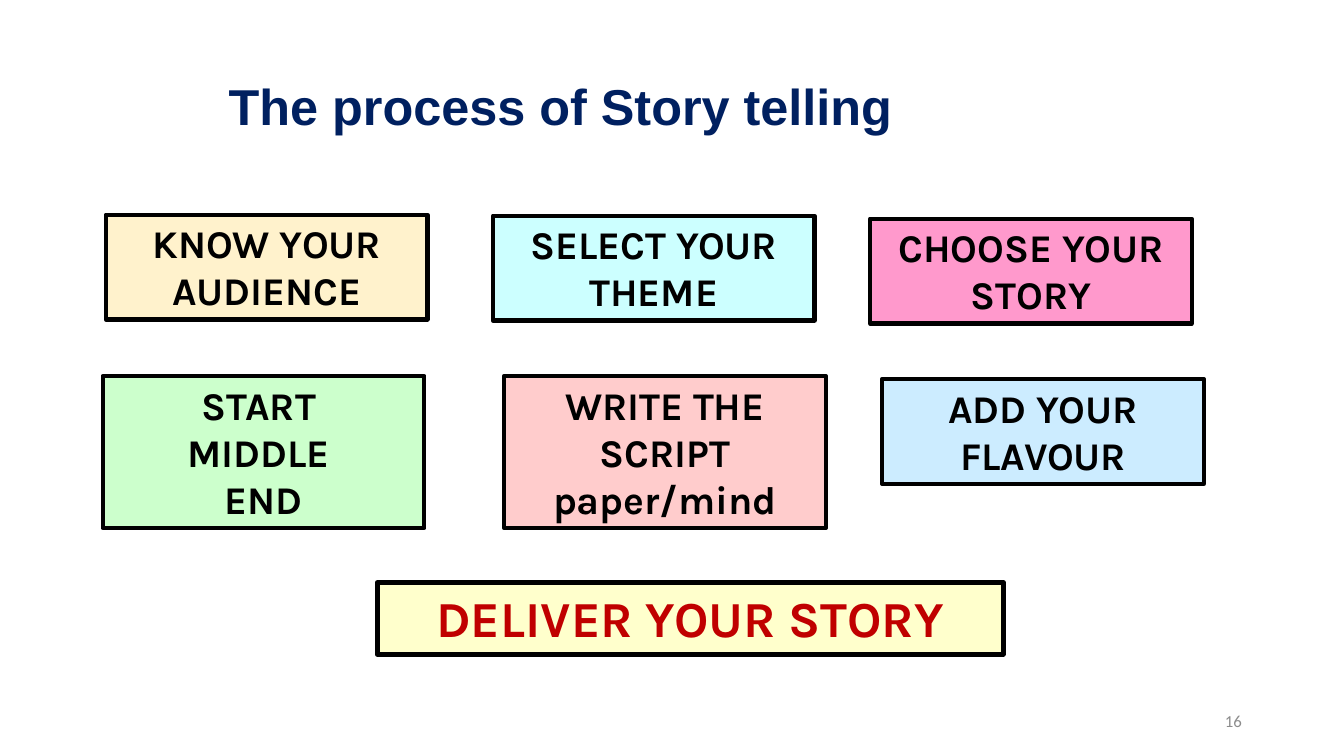
from pptx import Presentation, util as u
from pptx.dml.color import RGBColor
from pptx.enum import shapes, text

HEX = {
    "navy": "002060", "gray": "8C8C8C", "black": "000000", "red": "C00000",
    "cream": "FFF2CC", "aqua": "CCFFFF", "pink": "FF99CC", "green": "CCFFCC",
    "rose": "FFCCCC", "sky": "CCECFF", "yellow": "FFFFCC",
}
LEFT, MID, RIGHT = text.PP_ALIGN.LEFT, text.PP_ALIGN.CENTER, text.PP_ALIGN.RIGHT
TOP, CORE, BASE = text.MSO_ANCHOR.TOP, text.MSO_ANCHOR.MIDDLE, text.MSO_ANCHOR.BOTTOM

deck = Presentation()
deck.slide_width, deck.slide_height = u.Inches(13.33), u.Inches(7.5)
slide = deck.slides.add_slide(deck.slide_layouts[6])


def place(x, y, wide, high):
    """Turn percent shares of the slide into lengths."""
    across, down = deck.slide_width / 100, deck.slide_height / 100
    return int(x * across), int(y * down), int(wide * across), int(high * down)


def write(shape, words, hue, align, anchor, **form):
    frame = shape.text_frame
    frame.word_wrap = True
    frame.vertical_anchor = anchor
    frame.text = words
    for para in frame.paragraphs:
        para.alignment = align
        for run in para.runs:
            run.font.color.rgb = RGBColor.from_string(HEX[hue])
            for key, value in form.items():
                setattr(run.font, key, value)


title = slide.shapes.add_textbox(*place(16.28, 0.53, 70.13, 18))
write(title, "The process of Story telling", "navy", LEFT, BASE,
      name="Arial", size=u.Pt(36), bold=True)

number = slide.shapes.add_textbox(*place(70.65, 92.67, 22.5, 5.33))
write(number, "16", "gray", RIGHT, CORE, name="Calibri", size=u.Pt(12))

# Steps share one width; heights follow the number of text lines
wide, two, three = 23.93, 13.87, 20.13
step = {"ink": "black", "size": 28, "line": 3}
final = {"ink": "red", "size": 36, "line": 3.5}
boxes = [
    ("KNOW YOUR AUDIENCE", "cream", (7.88, 28.4, wide, two), step),
    ("SELECT YOUR THEME", "aqua", (36.68, 28.53, wide, two), step),
    ("CHOOSE YOUR STORY", "pink", (64.74, 28.93, wide, two), step),
    ("START \nMIDDLE \nEND", "green", (7.65, 49.73, wide, three), step),
    ("WRITE THE SCRIPT paper/mind", "rose", (37.51, 49.73, wide, three), step),
    ("ADD YOUR FLAVOUR", "sky", (65.64, 50.13, wide, two), step),
    ("DELIVER YOUR STORY", "yellow", (28.06, 77.07, 46.59, 9.47), final),
]
for words, hue, spot, form in boxes:
    box = slide.shapes.add_shape(shapes.MSO_SHAPE.RECTANGLE, *place(*spot))
    box.shadow.inherit = False
    box.fill.solid()
    box.fill.fore_color.rgb = RGBColor.from_string(HEX[hue])
    box.line.color.rgb = RGBColor.from_string(HEX["black"])
    box.line.width = u.Pt(form["line"])
    write(box, words, form["ink"], MID, TOP,
          name="Karla", size=u.Pt(form["size"]), bold=True)

deck.save("out.pptx")
